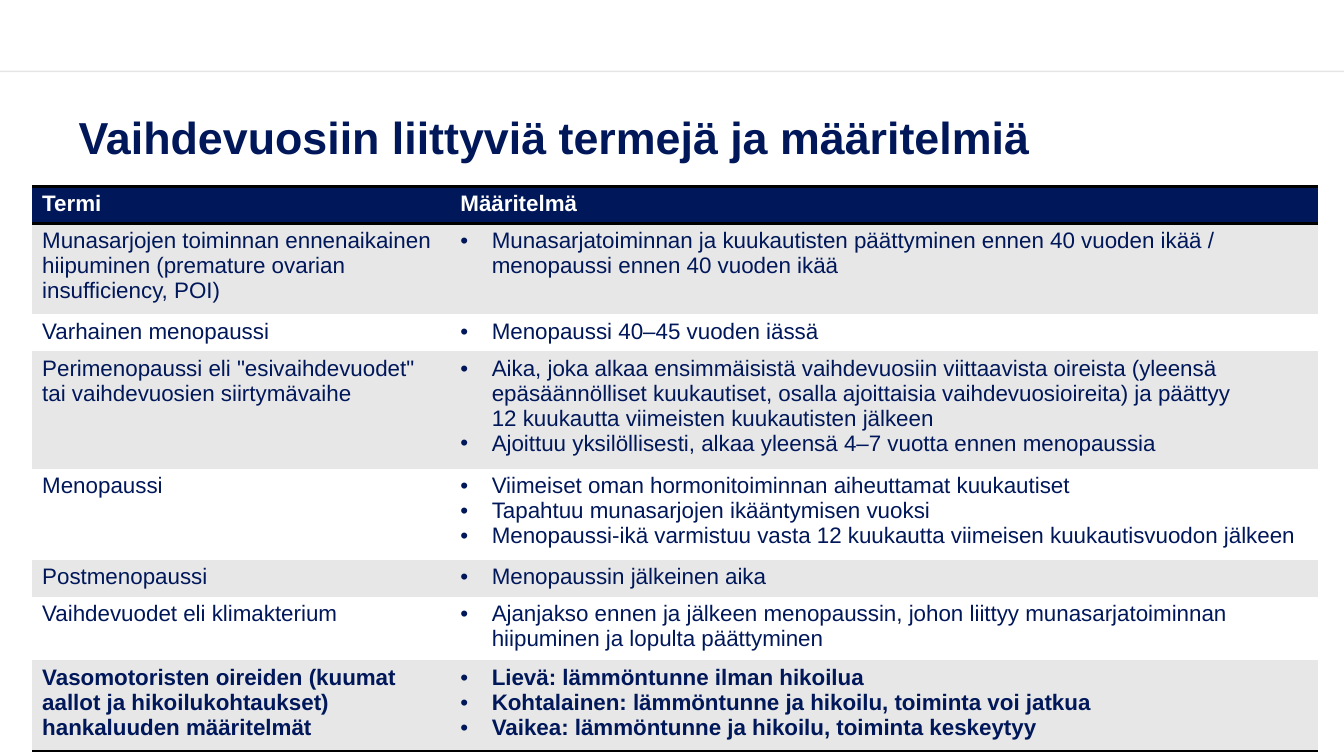
from pptx import Presentation
from pptx.dml.color import RGBColor
from pptx.enum import shapes, text
from pptx.oxml import parse_xml
from pptx.oxml.ns import nsdecls, qn
from pptx.util import Cm, Pt

COLORS = {"navy": "001759", "white": "FFFFFF", "band": "E7E7E7", "black": "000000"}
FONT = "Arial"
NO_STYLE = "{2D5ABB26-0587-4C30-8999-92F81FD0307C}"
COLUMN_WIDTHS = (10.54, 21.87)
MIN_ROW_HEIGHT = 0.84
INDENT = Cm(0.79)

TITLE = "Vaihdevuosiin liittyviä termejä ja määritelmiä"
HEADER = ("Termi", "Määritelmä")
TERMS = [
    ("Munasarjojen toiminnan ennenaikainen hiipuminen (premature ovarian insufficiency, POI)",
     ["Munasarjatoiminnan ja kuukautisten päättyminen ennen 40 vuoden ikää / "
      "menopaussi ennen 40 vuoden ikää"]),
    ("Varhainen menopaussi", ["Menopaussi 40–45 vuoden iässä"]),
    ('Perimenopaussi eli "esivaihdevuodet"\ntai vaihdevuosien siirtymävaihe',
     ["Aika, joka alkaa ensimmäisistä vaihdevuosiin viittaavista oireista (yleensä "
      "epäsäännölliset kuukautiset, osalla ajoittaisia vaihdevuosioireita) ja päättyy\n"
      "12 kuukautta viimeisten kuukautisten jälkeen",
      "Ajoittuu yksilöllisesti, alkaa yleensä 4–7 vuotta ennen menopaussia"]),
    ("Menopaussi",
     ["Viimeiset oman hormonitoiminnan aiheuttamat kuukautiset",
      "Tapahtuu munasarjojen ikääntymisen vuoksi",
      "Menopaussi-ikä varmistuu vasta 12 kuukautta viimeisen kuukautisvuodon jälkeen"]),
    ("Postmenopaussi", ["Menopaussin jälkeinen aika"]),
    ("Vaihdevuodet eli klimakterium",
     ["Ajanjakso ennen ja jälkeen menopaussin, johon liittyy munasarjatoiminnan "
      "hiipuminen ja lopulta päättyminen"]),
    ("Vasomotoristen oireiden (kuumat aallot ja hikoilukohtaukset) hankaluuden määritelmät",
     ["Lievä: lämmöntunne ilman hikoilua",
      "Kohtalainen: lämmöntunne ja hikoilu, toiminta voi jatkua",
      "Vaikea: lämmöntunne ja hikoilu, toiminta keskeytyy"]),
]


def color(name):
    return RGBColor.from_string(COLORS[name])


def add_text(para, wording, size, color_name, bold):
    """Add one run per line, with line breaks between them."""
    for number, line in enumerate(wording.split("\n")):
        if number:
            para.add_line_break()
        span = para.add_run()
        span.text = line
        span.font.name = FONT
        span.font.size = Pt(size)
        span.font.bold = bold
        span.font.color.rgb = color(color_name)


def add_bullet(para):
    properties = para._p.get_or_add_pPr()
    properties.set("marL", str(INDENT))
    properties.set("indent", str(-INDENT))
    properties.append(parse_xml(f'<a:buFont {nsdecls("a")} typeface="{FONT}"/>'))
    properties.append(parse_xml(f'<a:buChar {nsdecls("a")} char="•"/>'))


def add_borders(cell, sides):
    """Draw black 2 pt borders; sides are given in schema order."""
    properties = cell._tc.get_or_add_tcPr()
    for side in reversed(sides):
        properties.insert(0, parse_xml(
            f'<a:ln{side} {nsdecls("a")} w="{Pt(2)}"><a:solidFill>'
            f'<a:srgbClr val="{COLORS["black"]}"/></a:solidFill></a:ln{side}>'))


def fill_cell(cell, wordings, fill, color_name, bold, bullets, borders):
    cell.fill.solid()
    cell.fill.fore_color.rgb = color(fill)
    frame = cell.text_frame
    for number, wording in enumerate(wordings):
        para = frame.add_paragraph() if number else frame.paragraphs[0]
        if bullets:
            add_bullet(para)
        add_text(para, wording, 16, color_name, bold)
    add_borders(cell, borders)


def add_top_rule(page, left, top, width):
    rule = page.shapes.add_connector(
        shapes.MSO_CONNECTOR.STRAIGHT, Cm(left), Cm(top), Cm(left + width), Cm(top))
    rule.line.width = Pt(1)
    rule.line.color.rgb = color("black")
    tone = rule._element.spPr.find(".//" + qn("a:srgbClr"))
    tone.append(parse_xml(f'<a:alpha {nsdecls("a")} val="10000"/>'))
    rule._element.spPr.append(parse_xml(f'<a:effectLst {nsdecls("a")}/>'))


def add_title(page, left, top, width, height):
    box = page.shapes.add_textbox(Cm(left), Cm(top), Cm(width), Cm(height))
    box.text_frame.word_wrap = True
    box.text_frame.vertical_anchor = text.MSO_ANCHOR.MIDDLE
    para = box.text_frame.paragraphs[0]
    para.line_spacing = 0.9
    add_text(para, TITLE, 32, "navy", True)


def add_term_table(page, left, top):
    """Place the table; rows grow from the least height to fit their text."""
    row_count = len(TERMS) + 1
    frame = page.shapes.add_table(row_count, 2, Cm(left), Cm(top),
                                  Cm(sum(COLUMN_WIDTHS)), Cm(MIN_ROW_HEIGHT * row_count))
    table = frame.table
    table.horz_banding = False
    table._tbl.tblPr.find(qn("a:tableStyleId")).text = NO_STYLE
    for column, width in zip(table.columns, COLUMN_WIDTHS):
        column.width = Cm(width)

    for column, heading in enumerate(HEADER):
        fill_cell(table.cell(0, column), [heading], "navy", "white", True, False, "TB")
    for row, (term, definitions) in enumerate(TERMS, 1):
        last = row == len(TERMS)
        fill = "band" if row % 2 else "white"
        for column, wordings in enumerate(([term], definitions)):
            fill_cell(table.cell(row, column), wordings, fill, "navy", last,
                      column == 1, "B" if last else "")


def main():
    deck = Presentation()
    deck.slide_width, deck.slide_height = Cm(33.87), Cm(19.05)
    page = deck.slides.add_slide(deck.slide_layouts[6])
    add_top_rule(page, 0, 1.8, 33.87)
    add_title(page, 1.73, 2.38, 30.33, 2.31)
    add_term_table(page, 0.81, 4.7)
    deck.save("out.pptx")


if __name__ == "__main__":
    main()
